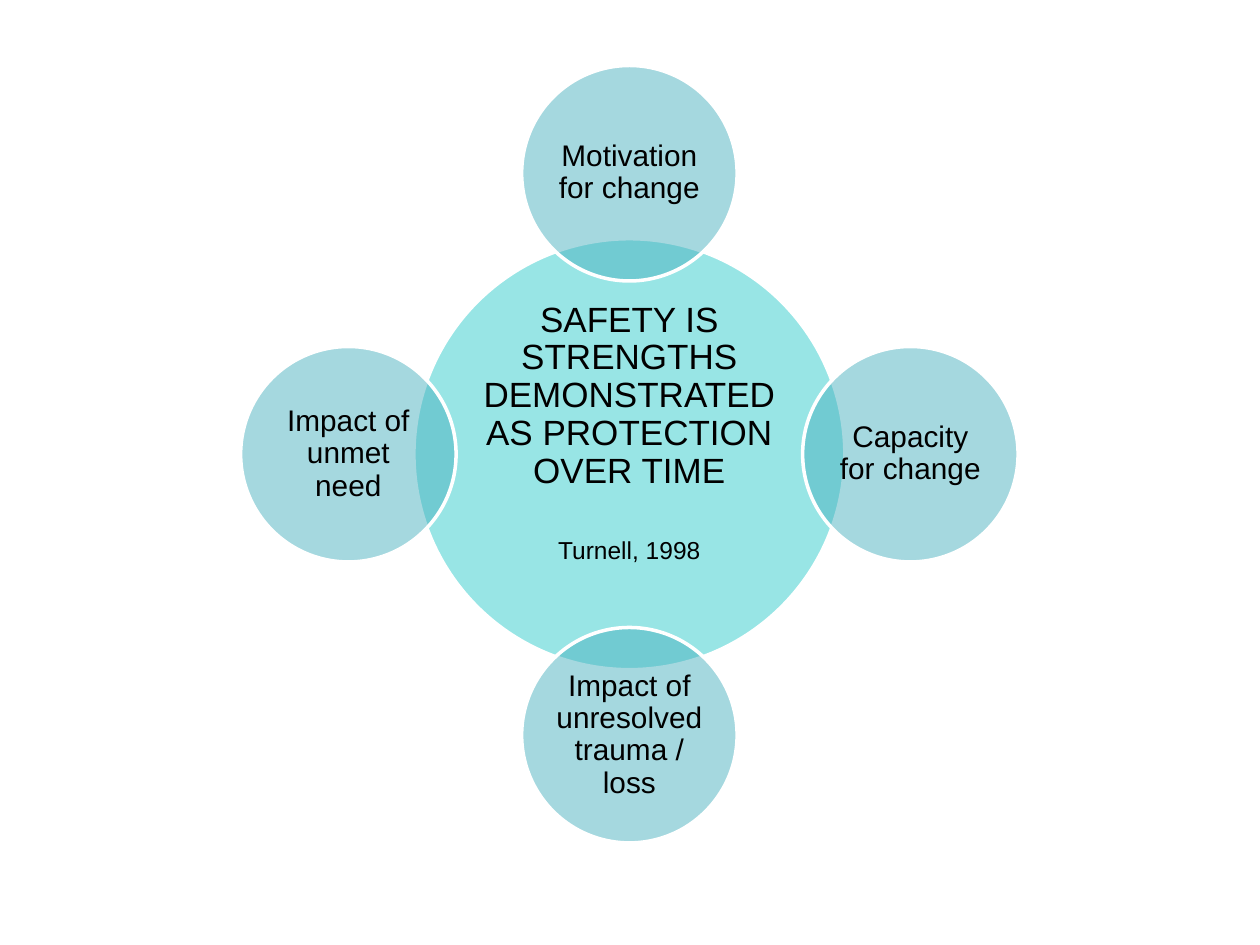
import math

from lxml import etree
from pptx import Presentation
from pptx.dml.color import RGBColor
from pptx.enum import shapes, text
from pptx.oxml.ns import qn
from pptx.util import Inches, Pt

COLORS = {"safety": "33CCCC", "factor": "4CB2C0", "outline": "FFFFFF", "text": "000000"}
CENTER_X, CENTER_Y = 4.995, 3.605
ORBIT = 2.23
SAFETY_SIZE, FACTOR_SIZE = 3.42, 1.71
FACTORS = [  # clockwise from the top
    "Motivation for change",
    "Capacity for change",
    "Impact of unresolved trauma / loss",
    "Impact of unmet need",
]


def square(center_x, center_y, size):
    """Return left, top, width and height of a square around a centre."""
    return [Inches(v) for v in (center_x - size / 2, center_y - size / 2, size, size)]


def add_circle(group, center_x, center_y, size, color):
    """Add a half-transparent circle with a white outline."""
    circle = group.shapes.add_shape(shapes.MSO_SHAPE.OVAL, *square(center_x, center_y, size))
    circle.shadow.inherit = False
    circle.fill.solid()
    circle.fill.fore_color.rgb = RGBColor.from_string(COLORS[color])
    color_xml = circle._element.spPr.find(qn("a:solidFill"))[0]
    etree.SubElement(color_xml, qn("a:alpha"), val="50000")
    circle.line.color.rgb = RGBColor.from_string(COLORS["outline"])
    circle.line.width = Pt(2)


def add_label(group, center_x, center_y, size, inset, anchor=text.MSO_ANCHOR.MIDDLE):
    """Add an empty text frame in the square inscribed in a circle."""
    box = group.shapes.add_textbox(*square(center_x, center_y, size / math.sqrt(2)))
    frame = box.text_frame
    frame.word_wrap = True
    frame.vertical_anchor = anchor
    frame.margin_left = frame.margin_right = Inches(inset)
    frame.margin_top = frame.margin_bottom = Inches(inset)
    return frame


def write(paragraph, wording, size, before=0):
    paragraph.alignment = text.PP_ALIGN.CENTER
    paragraph.line_spacing = 0.9
    paragraph.space_before = Pt(before)
    run = paragraph.add_run()
    run.text = wording
    run.font.name = "Arial"
    run.font.size = Pt(size)
    run.font.color.rgb = RGBColor.from_string(COLORS["text"])


def add_safety(group, center_x, center_y):
    add_circle(group, center_x, center_y, SAFETY_SIZE, "safety")
    frame = add_label(group, center_x, center_y, SAFETY_SIZE, 0.03, text.MSO_ANCHOR.TOP)
    frame.margin_top = 0
    write(frame.paragraphs[0], "SAFETY IS STRENGTHS DEMONSTRATED AS PROTECTION OVER TIME", 20)
    write(frame.add_paragraph(), "Turnell, 1998", 14, before=27)


def add_factor(group, center_x, center_y, wording):
    add_circle(group, center_x, center_y, FACTOR_SIZE, "factor")
    frame = add_label(group, center_x, center_y, FACTOR_SIZE, 0.02)
    write(frame.paragraphs[0], wording, 17)


def add_radial_venn(slide, center_x, center_y):
    group = slide.shapes.add_group_shape()
    add_safety(group, center_x, center_y)
    for index, factor in enumerate(FACTORS):
        angle = 2 * math.pi * index / len(FACTORS)
        add_factor(group, center_x + ORBIT * math.sin(angle),
                   center_y - ORBIT * math.cos(angle), factor)


def main():
    deck = Presentation()
    deck.slide_width, deck.slide_height = Inches(10), Inches(7.5)
    slide = deck.slides.add_slide(deck.slide_layouts[6])
    add_radial_venn(slide, CENTER_X, CENTER_Y)
    deck.save("out.pptx")


if __name__ == "__main__":
    main()
